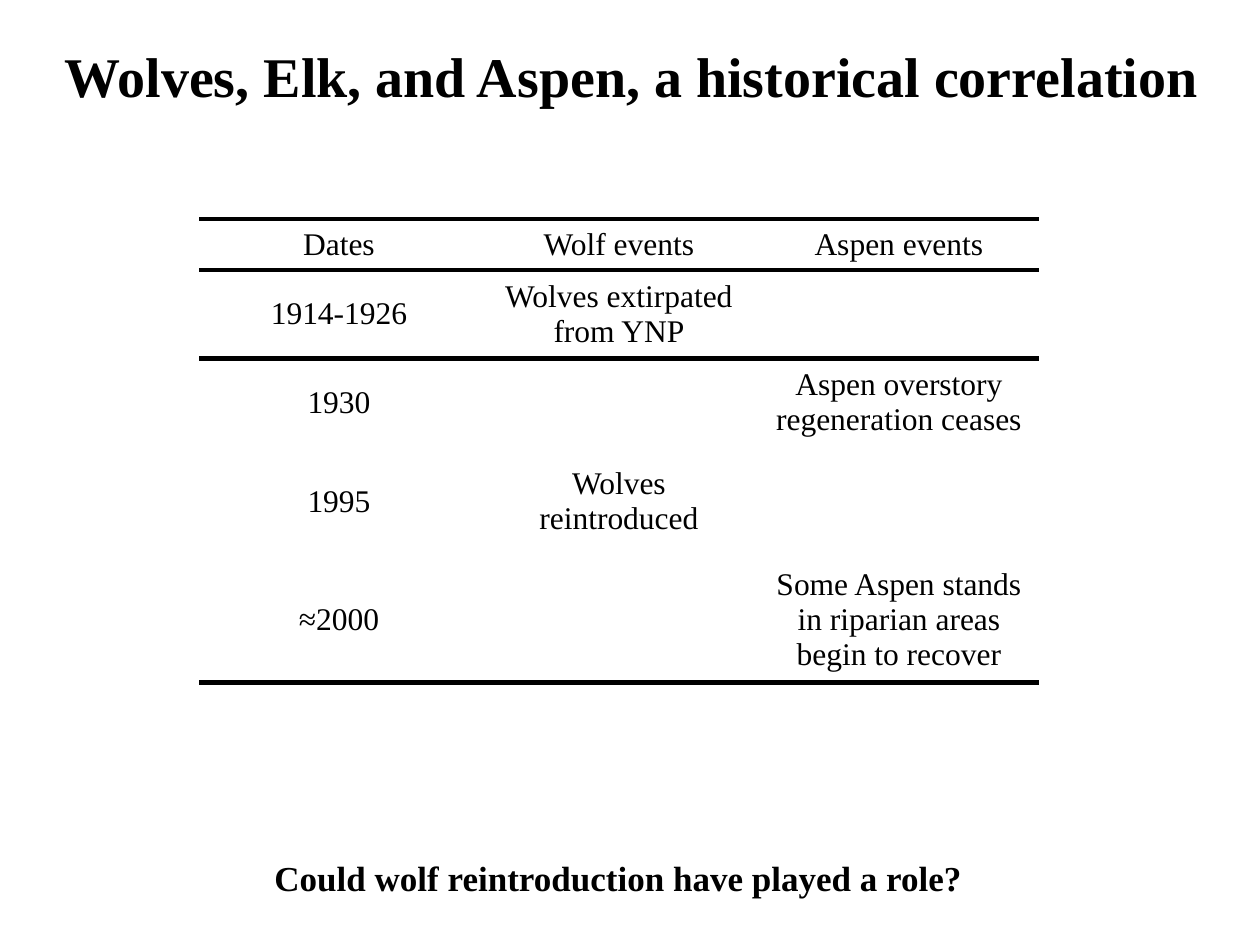
from dataclasses import dataclass

from lxml.etree import SubElement
from pptx import Presentation
from pptx.dml.color import RGBColor
from pptx.enum.text import MSO_ANCHOR, MSO_AUTO_SIZE, PP_ALIGN
from pptx.oxml.ns import qn
from pptx.util import Emu, Pt

NO_STYLE = "{2D5ABB26-0587-4C30-8999-92F81FD0307C}"
EVENTS = [
    ("Dates", "Wolf events", "Aspen events"),
    ("1914-1926", "Wolves extirpated from YNP", ""),
    ("1930", "", "Aspen overstory regeneration ceases"),
    ("1995", "Wolves reintroduced", ""),
    ("≈2000", "", "Some Aspen stands in riparian areas begin to recover"),
]
ROW_HEIGHTS = [51, 88, 88, 110, 126]
RULES = {0: ("lnT", "lnB"), 1: ("lnT",), len(EVENTS) - 1: ("lnB",)}


@dataclass(frozen=True)
class Theme:
    """Typeface, colour, type sizes and rule weight."""

    font: str = "Times New Roman"
    ink: str = "000000"
    title: int = 32
    question: int = 20
    body: int = 18
    rule: int = 3


def px(length):
    """Convert pixels at 126 to the inch into EMU."""
    return Emu(round(length * 914400 / 126))


class SlideBuilder:
    """Holds the theme and the current slide."""

    def __init__(self, slide, theme):
        """Keep the slide and its theme."""
        self.slide = slide
        self.theme = theme

    def style(self, para, size, bold=False, align=PP_ALIGN.CENTER):
        """Set the font and alignment of a paragraph."""
        para.alignment = align
        para.font.name = self.theme.font
        para.font.size = Pt(size)
        para.font.bold = bold
        para.font.color.rgb = RGBColor.from_string(self.theme.ink)

    def text(self, bounds, words, size, align=PP_ALIGN.CENTER, wrap=True):
        """Add a bold line of text."""
        box = self.slide.shapes.add_textbox(*map(px, bounds))
        frame = box.text_frame
        frame.word_wrap = wrap
        frame.auto_size = MSO_AUTO_SIZE.SHAPE_TO_FIT_TEXT
        para = frame.paragraphs[0]
        para.text = words
        self.style(para, size, bold=True, align=align)

    def rule(self, cell, side):
        """Draw a solid rule on one side of a cell."""
        properties = cell._tc.get_or_add_tcPr()
        line = SubElement(properties, qn(f"a:{side}"), w=str(Pt(self.theme.rule)))
        fill = SubElement(line, qn("a:solidFill"))
        SubElement(fill, qn("a:srgbClr"), val=self.theme.ink)

    def table(self, left, top, width, heights, rows):
        """Add a ruled table with equal columns."""
        bounds = map(px, (left, top, width, sum(heights)))
        frame = self.slide.shapes.add_table(len(rows), len(rows[0]), *bounds)
        table = frame.table
        table.first_row = table.horz_banding = False
        table._tbl.tblPr.find(qn("a:tableStyleId")).text = NO_STYLE
        for index, (height, words) in enumerate(zip(heights, rows)):
            table.rows[index].height = px(height)
            for cell, label in zip(table.rows[index].cells, words):
                cell.text = label
                cell.vertical_anchor = MSO_ANCHOR.MIDDLE
                self.style(cell.text_frame.paragraphs[0], self.theme.body)
                for side in RULES.get(index, ()):
                    self.rule(cell, side)
                cell.fill.background()


def main():
    """Build and save the slide."""
    deck = Presentation()
    deck.slide_width, deck.slide_height = px(1260), px(945)
    theme = Theme()
    page = SlideBuilder(deck.slides.add_slide(deck.slide_layouts[6]), theme)
    page.text((2, 35, 1260, 81), "Wolves, Elk, and Aspen, a historical correlation", theme.title)
    page.table(199, 219, 840, ROW_HEIGHTS, EVENTS)
    page.text(
        (262, 850, 718, 55),
        "Could wolf reintroduction have played a role?",
        theme.question,
        align=PP_ALIGN.LEFT,
        wrap=False,
    )
    deck.save("out.pptx")


if __name__ == "__main__":
    main()
